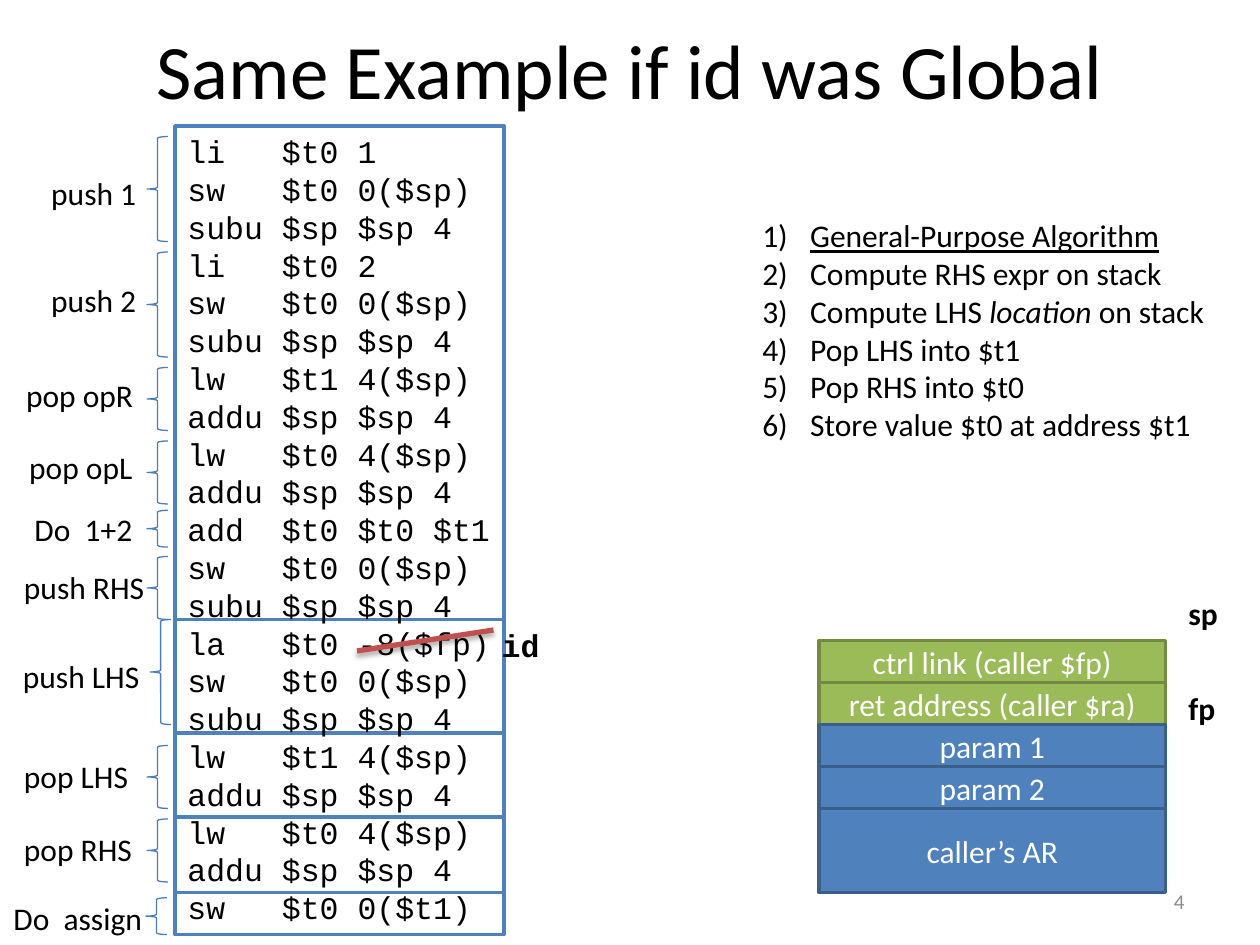
from collections import namedtuple
from dataclasses import dataclass

from lxml.etree import SubElement
from pptx import Presentation
from pptx.dml.color import RGBColor
from pptx.enum.shapes import MSO_CONNECTOR, MSO_SHAPE
from pptx.enum.text import MSO_ANCHOR, MSO_AUTO_SIZE, PP_ALIGN
from pptx.oxml.ns import qn
from pptx.util import Inches, Pt

COLUMNS, ROWS = 120, 90


@dataclass(frozen=True)
class Theme:
    sans: str = "Calibri"
    mono: str = "Courier New"
    title: int = 44
    body: int = 18
    small: int = 12
    ink: str = "000000"
    paper: str = "FFFFFF"
    grey: str = "8B8B8B"
    blue: str = "4F81BD"
    blue_edge: str = "3A5F8B"
    green: str = "9BBB59"
    green_edge: str = "728A41"
    brace: str = "4A7EBB"
    strike: str = "C0504D"


THEME = Theme()


class Box(namedtuple("Box", "left top width height")):
    def inner(self, left, top, width, height):
        return Box(self.left + left, self.top + top, width, height)

    def lengths(self):
        return [Inches(cells / 12) for cells in self]


def style(paragraph, size=THEME.body, font=THEME.sans, color=THEME.ink, bold=False):
    for run in paragraph.runs:
        run.font.size = Pt(size)
        run.font.name = font
        run.font.bold = bold
        run.font.color.rgb = RGBColor.from_string(color)


def move(placeholder, box):
    placeholder.left, placeholder.top, placeholder.width, placeholder.height = box.lengths()
    placeholder.text_frame.auto_size = MSO_AUTO_SIZE.NONE
    return placeholder.text_frame


def add_text(slide, box, text, align=PP_ALIGN.LEFT, **look):
    frame = slide.shapes.add_textbox(*box.lengths()).text_frame
    frame.word_wrap = True
    frame.text = text
    for paragraph in frame.paragraphs:
        paragraph.alignment = align
        style(paragraph, **look)
    return frame


def add_outline(slide, box, preset, line, weight, fill=None):
    shape = slide.shapes.add_shape(preset, *box.lengths())
    shape.shadow.inherit = False
    shape.line.color.rgb = RGBColor.from_string(line)
    shape.line.width = Pt(weight)
    if fill:
        shape.fill.solid()
        shape.fill.fore_color.rgb = RGBColor.from_string(fill)
    else:
        shape.fill.background()
    return shape


def add_title(slide, box):
    frame = move(slide.shapes.title, box)
    frame.text = "Same Example if id was Global"
    frame.vertical_anchor = MSO_ANCHOR.MIDDLE
    frame.paragraphs[0].alignment = PP_ALIGN.CENTER
    style(frame.paragraphs[0], size=THEME.title)


def add_code(slide, box):
    for top, height in ((69, 8), (65, 8), (57.8, 8), (47, 10.8), (0, 47)):
        add_outline(slide, box.inner(0, top, box.width, height),
                    MSO_SHAPE.RECTANGLE, THEME.blue, 2, THEME.paper)
    push = ["sw   $t0 0($sp)", "subu $sp $sp 4"]
    pops = ["lw   $t1 4($sp)", "addu $sp $sp 4", "lw   $t0 4($sp)", "addu $sp $sp 4"]
    code = ["li   $t0 1", *push, "li   $t0 2", *push, *pops, "add  $t0 $t0 $t1", *push,
            "la   $t0 -8($fp)", *push, *pops, "sw   $t0 0($t1)"]
    add_text(slide, box.inner(0, 0, box.width + 2, box.height), "\n".join(code),
             font=THEME.mono)


def add_steps(slide, box):
    steps = (
        ("push 1", 3.7, 16, 14, 13, 10),
        ("push 2", 3.7, 26.2, 14, 24, 10),
        ("pop opR", 1.3, 35.2, 14, 35, 6),
        ("pop opL", 1.6, 42.1, 14, 42, 6),
        ("Do  1+2", 2.1, 48, 14, 48.6, 3.5),
        ("push RHS", 1.1, 53.5, 14, 53, 6),
        ("push LHS", 1, 62, 14.3, 59, 10),
        ("pop LHS", 1.1, 71.5, 14, 71, 6),
        ("pop RHS", 1.1, 78.5, 14, 78, 6),
        ("Do  assign", 0.1, 85, 13.9, 85.5, 3.5),
    )
    for step, left, top, brace_left, brace_top, brace_height in steps:
        brace = add_outline(slide, box.inner(brace_left, brace_top, 2, brace_height),
                            MSO_SHAPE.LEFT_BRACE, THEME.brace, 0.75)
        brace.adjustments[0] = 0.083
        add_text(slide, box.inner(left, top, box.width, 4.8), step)


def add_algorithm(slide, box):
    frame = move(slide.placeholders[1], box)
    frame.text = "\n".join((
        "General-Purpose Algorithm",
        "Compute RHS expr on stack",
        "Compute LHS ",
        "Pop LHS into $t1",
        "Pop RHS into $t0",
        "Store value $t0 at address $t1",
    ))
    heading, *steps = frame.paragraphs
    for text in ("location", " on stack"):
        steps[1].add_run().text = text
    steps[1].runs[1].font.italic = True
    for paragraph in frame.paragraphs:
        paragraph.space_before = Pt(0)
        style(paragraph, bold=paragraph is heading)
        properties = paragraph._p.get_or_add_pPr()
        indent = 0 if paragraph is heading else Inches(0.38)
        properties.set("marL", str(indent))
        properties.set("indent", str(-indent))
        if paragraph is heading:
            SubElement(properties, qn("a:buNone"))
        else:
            SubElement(properties, qn("a:buFont"), typeface="+mj-lt")
            SubElement(properties, qn("a:buAutoNum"), type="arabicParenR")
    heading.runs[0].font.underline = True


def add_stack(slide, box):
    green, blue = (THEME.green, THEME.green_edge), (THEME.blue, THEME.blue_edge)
    entries = (
        ("ctrl link (caller $fp)", 1, green),
        ("ret address (caller $ra)", 1, green),
        ("param 1", 1, blue),
        ("param 2", 1, blue),
        ("caller’s AR", 2, blue),
    )
    row = box.height / sum(rows for _, rows, _ in entries)
    top = 0
    for entry, rows, (fill, edge) in entries:
        cell = add_outline(slide, box.inner(0, top, box.width, rows * row),
                           MSO_SHAPE.RECTANGLE, edge, 2, fill)
        frame = cell.text_frame
        frame.text = entry
        frame.vertical_anchor = MSO_ANCHOR.MIDDLE
        frame.paragraphs[0].alignment = PP_ALIGN.CENTER
        style(frame.paragraphs[0], color=THEME.paper)
        top += rows * row
    for pointer, offset in (("sp", -5), ("fp", 4)):
        add_text(slide, box.inner(box.width + 1, offset, 6, 4.8), pointer, bold=True)


def add_correction(slide, box):
    left, top, width, height = box.lengths()
    strike = slide.shapes.add_connector(MSO_CONNECTOR.STRAIGHT,
                                        left, top + height, left + width, top)
    strike.line.color.rgb = RGBColor.from_string(THEME.strike)
    strike.line.width = Pt(3)
    effects = SubElement(strike._element.spPr, qn("a:effectLst"))
    shadow = SubElement(effects, qn("a:outerShdw"), blurRad=str(Pt(3.1)),
                        dist=str(Pt(1.8)), dir="5400000", rotWithShape="0")
    tint = SubElement(shadow, qn("a:srgbClr"), val=THEME.ink)
    SubElement(tint, qn("a:alpha"), val="35000")
    add_text(slide, box.inner(box.width - 0.4, -1, 6, 4.8), "id",
             font=THEME.mono, bold=True)


def add_page_number(slide, box):
    frame = add_text(slide, box, "4", PP_ALIGN.RIGHT, size=THEME.small, color=THEME.grey)
    frame.vertical_anchor = MSO_ANCHOR.MIDDLE


def main():
    deck = Presentation()
    deck.slide_width, deck.slide_height = Inches(COLUMNS / 12), Inches(ROWS / 12)
    slide = deck.slides.add_slide(deck.slide_layouts[1])
    add_code(slide, Box(16.67, 12, 31.33, 77))
    add_steps(slide, Box(0, 0, 16, ROWS))
    add_title(slide, Box(0, -1, COLUMNS, 15))
    add_stack(slide, Box(78, 61, 33, 24))
    add_algorithm(slide, Box(71.4, 20, 46, 22.8))
    add_correction(slide, Box(34, 60, 13, 2))
    add_page_number(slide, Box(86, 83.4, 28, 4.8))
    deck.save("out.pptx")


if __name__ == "__main__":
    main()
